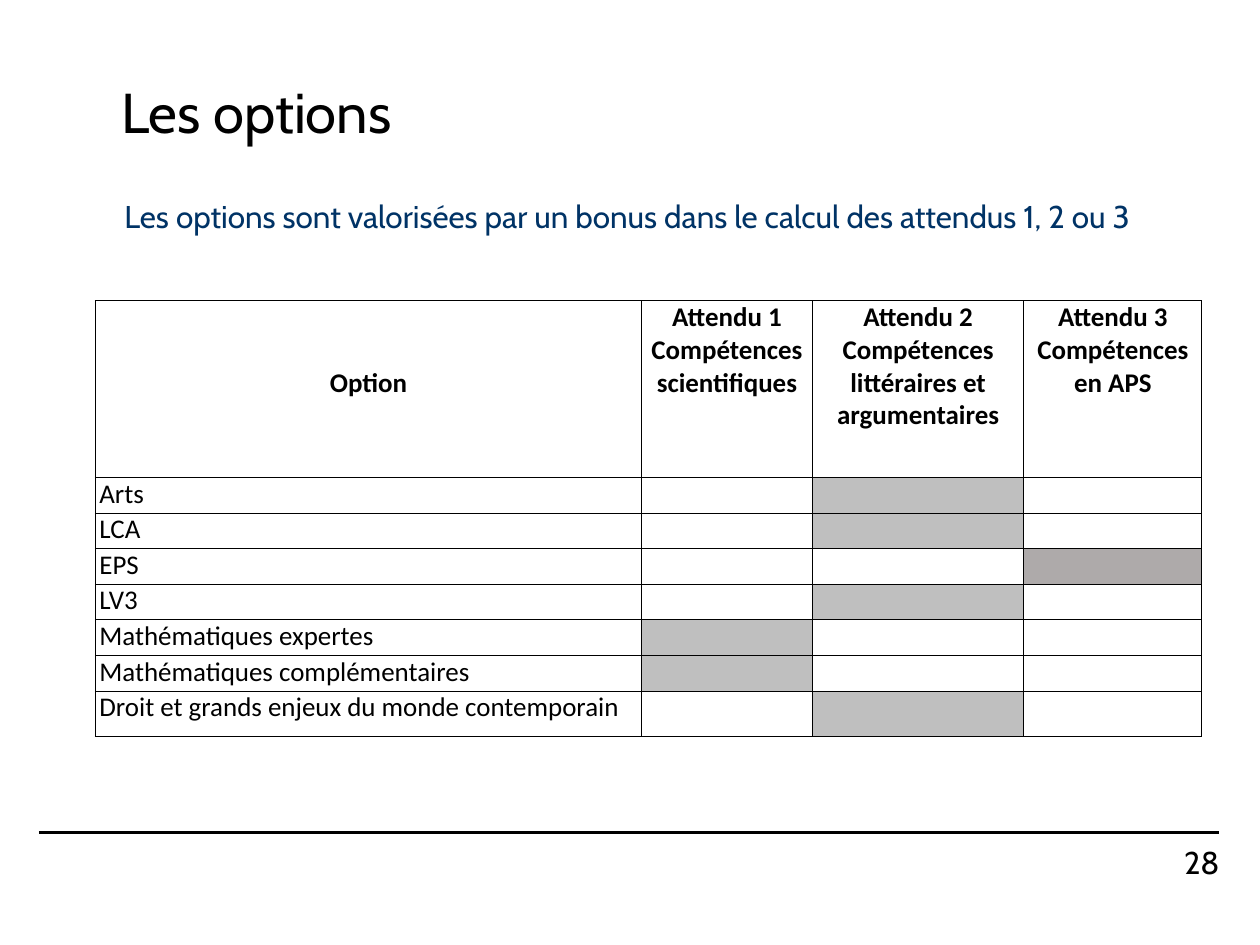
import pptx
import pptx.util
import pptx.dml.color
import pptx.enum.shapes
import pptx.enum.text
import pptx.oxml.ns
from lxml import etree

Inches, Pt = pptx.util.Inches, pptx.util.Pt
ALIGN = pptx.enum.text.PP_ALIGN
ANCHOR = pptx.enum.text.MSO_ANCHOR

# Content
TITLE = "Les options"
SUBTITLE = "Les options sont valorisées par un bonus dans le calcul des attendus 1, 2 ou 3"
PAGE_NUMBER = "28"
HEADERS = [
    "Option",
    "Attendu 1 Compétences scientifiques",
    "Attendu 2 Compétences littéraires et argumentaires",
    "Attendu 3\nCompétences en APS",
]
# Option, the expectation it counts towards, shade of that cell
OPTIONS = [
    ("Arts", 2, "grey"),
    ("LCA", 2, "grey"),
    ("EPS", 3, "warm_grey"),
    ("LV3", 2, "grey"),
    ("Mathématiques expertes", 1, "grey"),
    ("Mathématiques complémentaires", 1, "grey"),
    ("Droit et grands enjeux du monde contemporain", 2, "grey"),
]
COLORS = {"black": "000000", "white": "FFFFFF", "navy": "003366",
          "grey": "BFBFBF", "warm_grey": "AEAAAA"}
COLUMN_WIDTHS = [6.76, 2.11, 2.62, 2.2]
ROW_HEIGHTS = [2.19] + [0.44] * (len(OPTIONS) - 1) + [0.56]


def rgb(name):
    return pptx.dml.color.RGBColor.from_string(COLORS[name])


def write(frame, text, size=24, font="Calibri", color="black", bold=False,
          align=ALIGN.LEFT, anchor=ANCHOR.TOP, margins=(0.1, 0.05, 0.1, 0.05), spacing=None):
    frame.word_wrap = True
    frame.vertical_anchor = anchor
    (frame.margin_left, frame.margin_top,
     frame.margin_right, frame.margin_bottom) = map(Inches, margins)
    frame.text = text
    for paragraph in frame.paragraphs:
        paragraph.alignment = align
        paragraph.line_spacing = spacing
        paragraph.font.size = Pt(size)
        paragraph.font.name = font
        paragraph.font.bold = bold
        paragraph.font.color.rgb = rgb(color)


def format_cell(cell, fill):
    properties = cell._tc.get_or_add_tcPr()
    for side in ("a:lnL", "a:lnR", "a:lnT", "a:lnB"):
        border = etree.SubElement(properties, pptx.oxml.ns.qn(side), w=str(Pt(1)))
        solid = etree.SubElement(border, pptx.oxml.ns.qn("a:solidFill"))
        etree.SubElement(solid, pptx.oxml.ns.qn("a:srgbClr"), val=COLORS["black"])
    cell.fill.solid()
    cell.fill.fore_color.rgb = rgb(fill)
    cell.margin_left = cell.margin_right = Inches(0.05)
    cell.margin_top = cell.margin_bottom = 0


prs = pptx.Presentation()
prs.slide_width, prs.slide_height = Inches(15.59), Inches(11.69)
slide = prs.slides.add_slide(prs.slide_layouts[5])

# Title and subtitle
title = slide.shapes.title
title.left, title.top, title.width, title.height = map(Inches, (1.4, 0.45, 13.73, 1.95))
write(title.text_frame, TITLE, size=50, font="Cabin", anchor=ANCHOR.MIDDLE, spacing=0.9)
title.text_frame.auto_size = pptx.enum.text.MSO_AUTO_SIZE.NONE

subtitle = slide.shapes.add_textbox(*map(Inches, (0.94, 2.39, 13.39, 0.57)))
write(subtitle.text_frame, SUBTITLE, size=28, font="Cabin", color="navy",
      margins=(0.6, 0.05, 0.1, 0.05))

# Table of options
options_frame = slide.shapes.add_table(
    len(ROW_HEIGHTS), len(COLUMN_WIDTHS), Inches(1.18), Inches(3.72),
    Inches(sum(COLUMN_WIDTHS)), Inches(sum(ROW_HEIGHTS)))
options = options_frame.table
options.first_row = options.horz_banding = False
for column, width in zip(options.columns, COLUMN_WIDTHS):
    column.width = Inches(width)
for row, height in zip(options.rows, ROW_HEIGHTS):
    row.height = Inches(height)

for col, header in enumerate(HEADERS):
    cell = options.cell(0, col)
    format_cell(cell, "white")
    write(cell.text_frame, header, bold=True, align=ALIGN.CENTER, margins=(0.05, 0, 0.05, 0))
option_header = options.cell(0, 0)
option_header.vertical_anchor = ANCHOR.MIDDLE
option_header.margin_bottom = Inches(0.15)

for row, (option, expectation, shade) in enumerate(OPTIONS, start=1):
    for col in range(len(HEADERS)):
        format_cell(options.cell(row, col), shade if col == expectation else "white")
    write(options.cell(row, 0).text_frame, option, margins=(0.05, 0, 0.05, 0))

# Footer rule and page number
footer_rule = slide.shapes.add_connector(
    pptx.enum.shapes.MSO_CONNECTOR.STRAIGHT,
    Inches(0.48), Inches(10.3), Inches(15.08), Inches(10.3))
footer_rule.line.color.rgb = rgb("black")
footer_rule.line.width = Pt(2)
etree.SubElement(footer_rule._element.spPr, pptx.oxml.ns.qn("a:effectLst"))

page_number = slide.shapes.add_textbox(*map(Inches, (12.8, 10.43, 2.29, 0.47)))
write(page_number.text_frame, PAGE_NUMBER, size=28, font="Cabin", align=ALIGN.RIGHT,
      anchor=ANCHOR.MIDDLE, margins=(0, 0, 0, 0))

prs.save("out.pptx")
